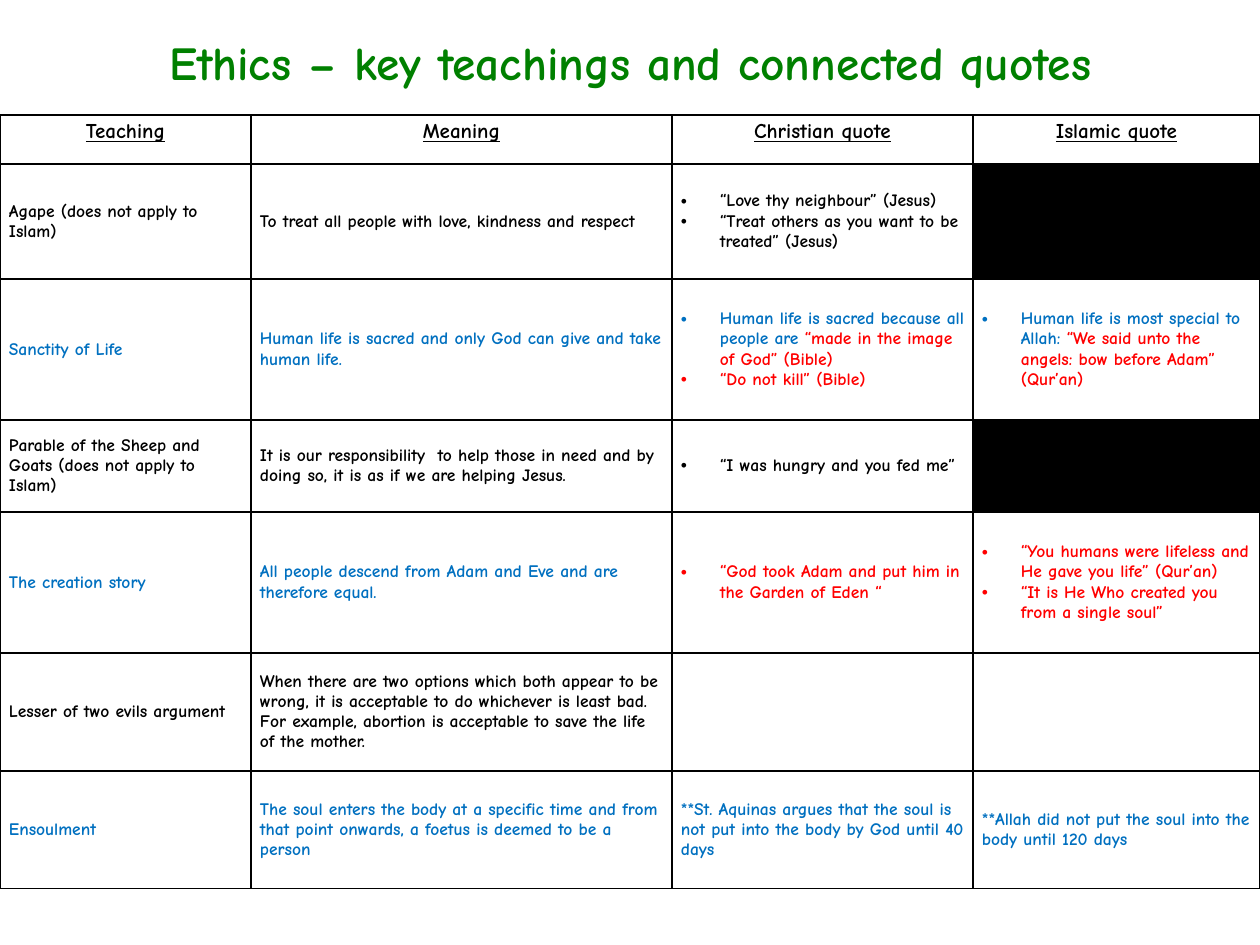
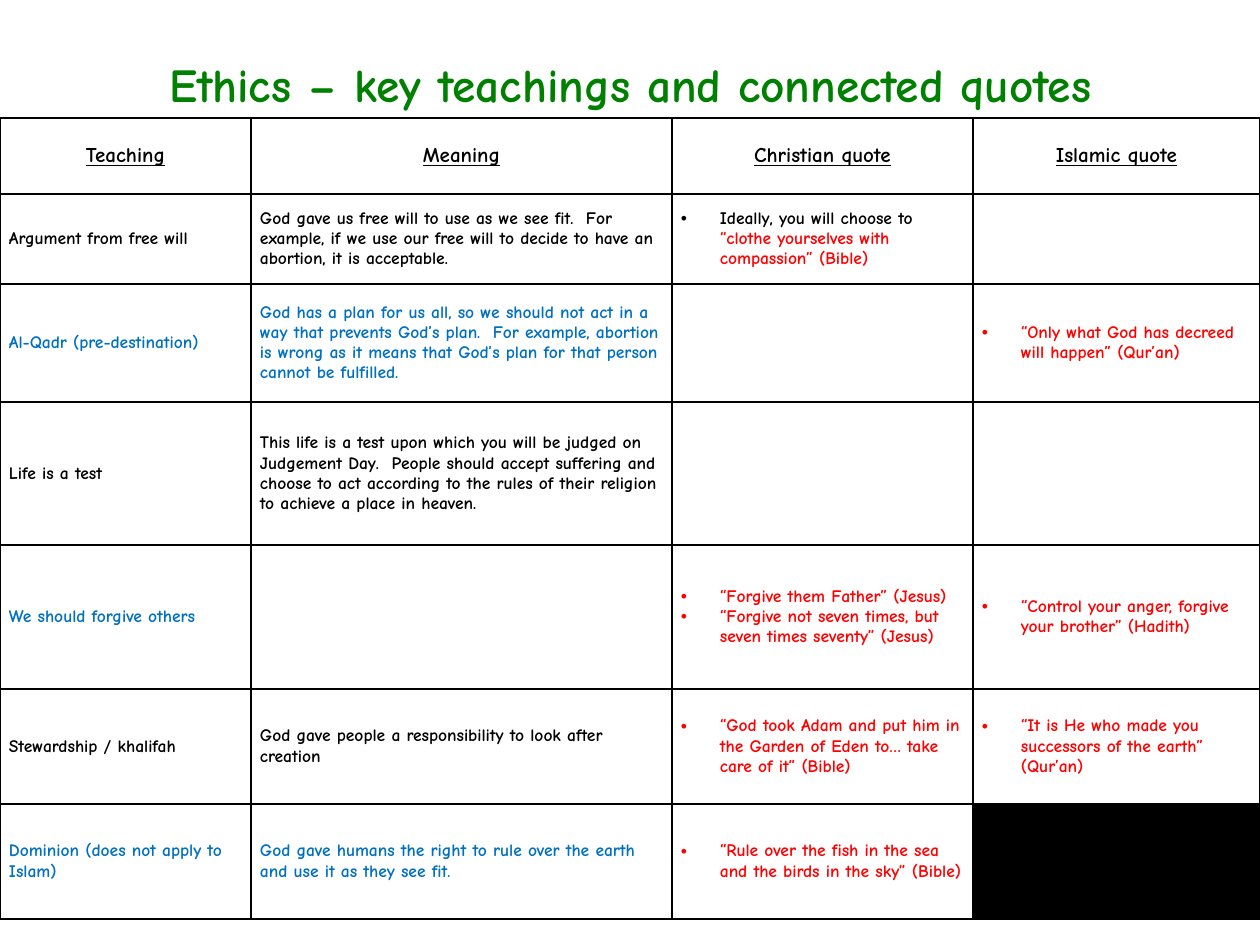
from lxml.etree import SubElement
from pptx import Presentation
from pptx.dml.color import RGBColor
from pptx.enum.text import MSO_ANCHOR as Anchor, PP_ALIGN as Align
from pptx.oxml.ns import qn
from pptx.util import Pt

PX = 7257.6
FONT = "Comic Neue"
COLORS = {"title": "008000", "black": "000000", "blue": "0070C0", "red": "FF0000"}
TITLE = "Ethics – key teachings and connected quotes"
HEADERS = ["Teaching", "Meaning", "Christian quote", "Islamic quote"]
COLUMN_WIDTHS = [251, 421, 301, 287]
MARGINS = {"margin_left": 9, "margin_top": 5, "margin_right": 9, "margin_bottom": 5}
BULLET_INDENT = 39
HEADER_FORMAT = {"size": Pt(12), "bold": True, "underline": True}
BODY_FORMAT = {"size": Pt(10), "bold": True, "underline": False}
TITLE_FORMAT = {"size": Pt(27), "bold": True}
BLACKED_OUT = None
RED_MARK = "|"

FIRST_PAGE = {
    "title_top": 26,
    "table_top": 115,
    "header_anchor": Anchor.TOP,
    "row_heights": [49, 115, 141, 92, 141, 118, 118],
    "rows": [
        ["Agape (does not apply to Islam)",
         "To treat all people with love, kindness and respect",
         ["“Love thy neighbour” (Jesus)", "“Treat others as you want to be treated” (Jesus)"],
         BLACKED_OUT],
        ["Sanctity of Life",
         "Human life is sacred and only God can give and take human life.",
         ["Human life is sacred because all people are |“made in the image of God” (Bible)",
          "|“Do not kill” (Bible)"],
         ["Human life is most special to Allah: |“We said unto the angels: bow before Adam” (Qur’an)"]],
        ["Parable of the Sheep and Goats (does not apply to Islam)",
         "It is our responsibility  to help those in need and by doing so, it is as if we are helping Jesus.",
         ["“I was hungry and you fed me”"],
         BLACKED_OUT],
        ["The creation story",
         "All people descend from Adam and Eve and are therefore equal.",
         ["|“God took Adam and put him in the Garden of Eden “"],
         ["|“You humans were lifeless and He gave you life” (Qur’an)",
          "|“It is He Who created you from a single soul”"]],
        ["Lesser of two evils argument",
         "When there are two options which both appear to be wrong, it is acceptable to do whichever "
         "is least bad.  For example, abortion is acceptable to save the life of the mother.",
         "", ""],
        ["Ensoulment",
         "The soul enters the body at a specific time and from that point onwards, "
         "a foetus is deemed to be a person",
         "**St. Aquinas argues that the soul is not put into the body by God until 40 days",
         "**Allah did not put the soul into the body until 120 days"],
    ],
}

SECOND_PAGE = {
    "title_top": 48,
    "table_top": 118,
    "header_anchor": Anchor.MIDDLE,
    "row_heights": [76, 90, 118, 143, 144, 115, 115],
    "rows": [
        ["Argument from free will",
         "God gave us free will to use as we see fit.  For example, if we use our free will "
         "to decide to have an abortion, it is acceptable.",
         ["Ideally, you will choose to |“clothe yourselves with compassion” (Bible)"],
         ""],
        ["Al-Qadr (pre-destination)",
         "God has a plan for us all, so we should not act in a way that prevents God’s plan.  "
         "For example, abortion is wrong as it means that God’s plan for that person cannot be fulfilled.",
         "",
         ["|“Only what God has decreed will happen” (Qur’an)"]],
        ["Life is a test",
         "This life is a test upon which you will be judged on Judgement Day.  People should accept "
         "suffering and choose to act according to the rules of their religion to achieve a place in heaven.",
         "", ""],
        ["We should forgive others",
         "",
         ["|“Forgive them Father” (Jesus)",
          "|“Forgive not seven times, but seven times seventy” (Jesus)"],
         ["|“Control your anger, forgive your brother” (Hadith)"]],
        ["Stewardship / khalifah",
         "God gave people a responsibility to look after creation",
         ["|“God took Adam and put him in the Garden of Eden to… take care of it” (Bible)"],
         ["|“It is He who made you successors of the earth” (Qur’an)"]],
        ["Dominion (does not apply to Islam)",
         "God gave humans the right to rule over the earth and use it as they see fit.",
         ["|“Rule over the fish in the sea and the birds in the sky” (Bible)"],
         BLACKED_OUT],
    ],
}


def px(length):
    return round(length * PX)


def set_all(target, values):
    for name, value in values.items():
        setattr(target, name, value)


def add_run(paragraph, text, color, text_format):
    run = paragraph.add_run()
    run.text = text
    set_all(run.font, {"name": FONT, **text_format})
    run.font.color.rgb = RGBColor.from_string(COLORS[color])


def add_bullet(paragraph):
    properties = paragraph._p.get_or_add_pPr()
    properties.set("marL", str(px(BULLET_INDENT)))
    properties.set("indent", str(-px(BULLET_INDENT)))
    SubElement(properties, qn("a:buFont")).set("typeface", "Arial")
    SubElement(properties, qn("a:buChar")).set("char", "•")


def add_borders(cell):
    properties = cell._tc.get_or_add_tcPr()
    for side in ("lnL", "lnR", "lnT", "lnB"):
        line = SubElement(properties, qn(f"a:{side}"), w=str(Pt(1)))
        fill = SubElement(line, qn("a:solidFill"))
        SubElement(fill, qn("a:srgbClr")).set("val", COLORS["black"])


def style_cell(cell, anchor, blacked_out=False):
    set_all(cell, {name: px(margin) for name, margin in MARGINS.items()})
    cell.vertical_anchor = anchor
    add_borders(cell)
    if blacked_out:
        cell.fill.solid()
        cell.fill.fore_color.rgb = RGBColor.from_string(COLORS["black"])
    else:
        cell.fill.background()


def fill_header_cell(cell, header, anchor):
    style_cell(cell, anchor)
    paragraph = cell.text_frame.paragraphs[0]
    paragraph.alignment = Align.CENTER
    add_run(paragraph, header, "black", HEADER_FORMAT)


def fill_body_cell(cell, content, color):
    style_cell(cell, Anchor.MIDDLE, content is BLACKED_OUT)
    if not content:
        return
    bulleted = isinstance(content, list)
    for index, text in enumerate(content if bulleted else [content]):
        frame = cell.text_frame
        paragraph = frame.add_paragraph() if index else frame.paragraphs[0]
        if bulleted:
            add_bullet(paragraph)
        plain, _, quote = text.partition(RED_MARK)
        for part, part_color in ((plain, color), (quote, "red")):
            if part:
                add_run(paragraph, part, part_color, BODY_FORMAT)


def add_title(slide, left, top, width, height):
    shape = slide.shapes.add_textbox(px(left), px(top), px(width), px(height))
    frame = shape.text_frame
    set_all(frame, {"word_wrap": True, "vertical_anchor": Anchor.MIDDLE})
    paragraph = frame.paragraphs[0]
    paragraph.alignment = Align.CENTER
    add_run(paragraph, TITLE, "title", TITLE_FORMAT)


def add_teachings_table(slide, left, top, page):
    heights = page["row_heights"]
    table = slide.shapes.add_table(
        len(heights), len(HEADERS), px(left), px(top),
        px(sum(COLUMN_WIDTHS)), px(sum(heights))).table
    set_all(table, {"first_row": False, "horz_banding": False})
    for column, width in zip(table.columns, COLUMN_WIDTHS):
        column.width = px(width)
    for row, height in zip(table.rows, heights):
        row.height = px(height)
    for column_index, header in enumerate(HEADERS):
        fill_header_cell(table.cell(0, column_index), header, page["header_anchor"])
    for row_index, contents in enumerate(page["rows"], 1):
        color = "black" if row_index % 2 else "blue"
        for column_index, content in enumerate(contents):
            fill_body_cell(table.cell(row_index, column_index), content, color)


def add_page(presentation, page):
    slide = presentation.slides.add_slide(presentation.slide_layouts[6])
    add_title(slide, 0, page["title_top"], 1260, 71)
    add_teachings_table(slide, 0, page["table_top"], page)


def main():
    presentation = Presentation()
    set_all(presentation, {"slide_width": px(1260), "slide_height": px(945)})
    for page in (FIRST_PAGE, SECOND_PAGE):
        add_page(presentation, page)
    presentation.save("out.pptx")


if __name__ == "__main__":
    main()
